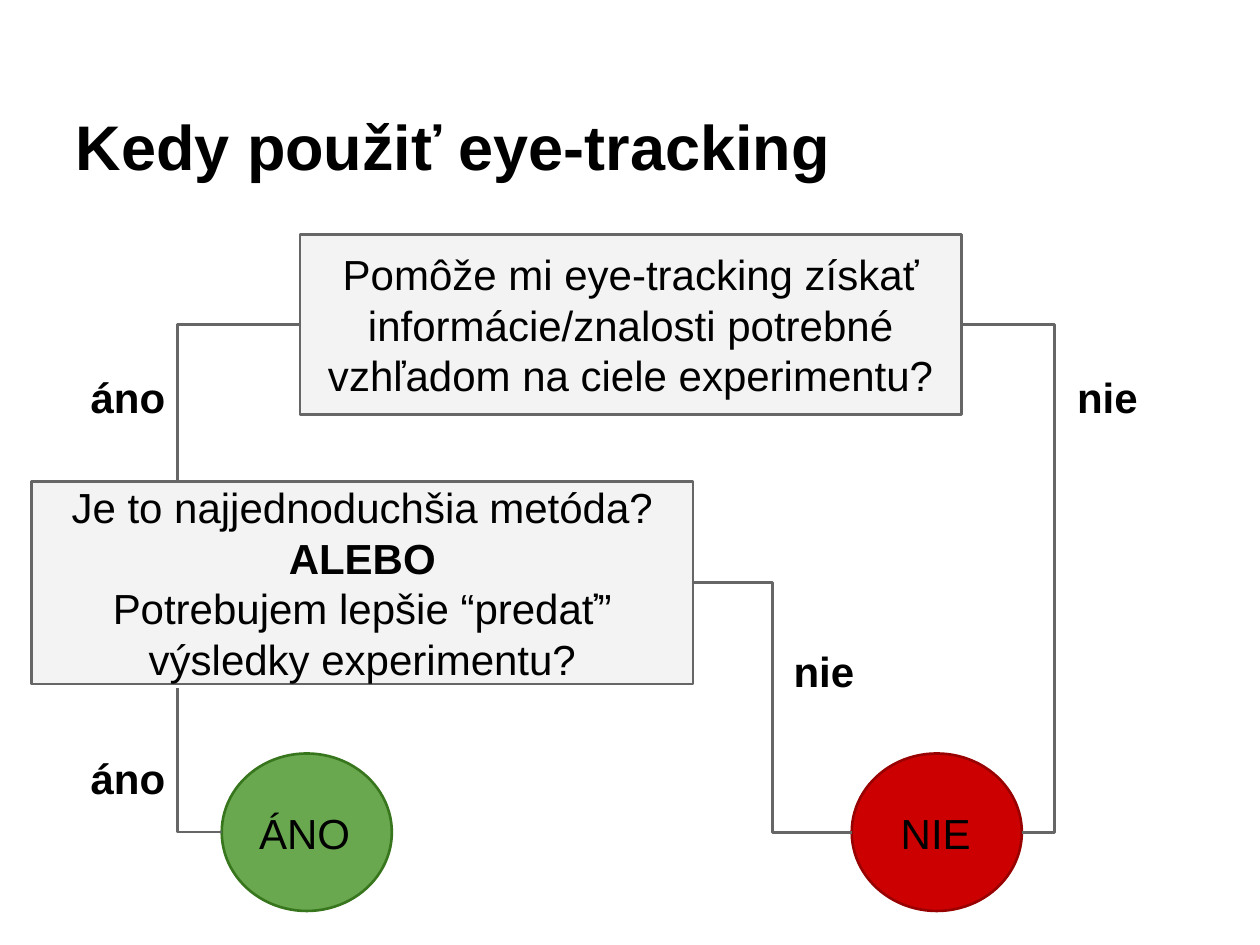
from lxml import etree
from pptx import Presentation
from pptx.dml.color import RGBColor
from pptx.enum import shapes, text
from pptx.oxml.ns import qn
from pptx.util import Inches, Pt

# Content: places are left, top, width, height in inches
TITLE = "Kedy použiť eye-tracking"
FONT, LINE = "Arial", "666666"
RECT, OVAL = shapes.MSO_SHAPE.RECTANGLE, shapes.MSO_SHAPE.OVAL
LEFT, CENTER, RIGHT = text.PP_ALIGN.LEFT, text.PP_ALIGN.CENTER, text.PP_ALIGN.RIGHT

NODES = {
    "helps": (RECT, (2.38, 1.86, 5.25, 1.43), "F3F3F3", LINE, CENTER,
              ["Pomôže mi eye-tracking získať informácie/znalosti potrebné "
               "vzhľadom na ciele experimentu?"]),
    "simplest": (RECT, (0.25, 3.82, 5.25, 1.61), "F3F3F3", LINE, CENTER,
                 ["Je to najjednoduchšia metóda?", "ALEBO",
                  "Potrebujem lepšie “predať” výsledky experimentu?"]),
    "yes": (OVAL, (1.76, 5.98, 1.35, 1.25), "6AA84F", "38761D", LEFT, ["ÁNO"]),
    "no": (OVAL, (6.76, 5.98, 1.35, 1.25), "CC0000", "990000", LEFT, [" NIE"]),
}
BOLD_LINES = {"ALEBO"}
LABELS = [("áno", 0.44, 2.85, RIGHT), ("áno", 0.44, 5.87, RIGHT),
          ("nie", 8.45, 2.85, LEFT), ("nie", 6.2, 5.02, LEFT)]

# Start node and side, end node and side (or a free point), x of the vertical part
YES_X = 1.41
LINKS = [("helps", "left", (YES_X, 3.83), YES_X),
         ("yes", "left", (YES_X, 5.46), YES_X),
         ("helps", "right", ("no", "right"), 8.37),
         ("simplest", "right", ("no", "left"), 6.13)]
SITES = {(RECT, "left"): 1, (RECT, "right"): 3, (OVAL, "left"): 2, (OVAL, "right"): 6}


def color(value):
    return RGBColor.from_string(value)


def write(frame, lines, size, align, anchor, bold=False):
    frame.word_wrap = True
    frame.vertical_anchor = anchor
    frame.margin_left = frame.margin_right = Inches(0.1)
    frame.margin_top = frame.margin_bottom = Inches(0.1)
    frame.text = "\n".join(lines)
    for para in frame.paragraphs:
        para.alignment = align
        for span in para.runs:
            span.font.name, span.font.size = FONT, Pt(size)
            span.font.bold = bold or span.text in BOLD_LINES
            span.font.color.rgb = color("000000")


def side_point(name, side):
    left, top, width, height = NODES[name][1]
    return left + (width if side == "right" else 0), top + height / 2


def glue(link, tag, name, side):
    etree.SubElement(link._element.nvCxnSpPr.cNvCxnSpPr, qn(tag),
                     id=str(boxes[name].shape_id), idx=str(SITES[NODES[name][0], side]))


deck = Presentation()
deck.slide_width, deck.slide_height = Inches(10), Inches(7.5)
page = deck.slides.add_slide(deck.slide_layouts[5])

# Title
title = page.shapes.title
title.left, title.top, title.width, title.height = map(Inches, (0.5, 0.3, 9, 1.25))
write(title.text_frame, [TITLE], 36, LEFT, text.MSO_ANCHOR.BOTTOM, bold=True)

# Questions and outcomes
boxes = {}
for name, (kind, place, fill, edge, align, lines) in NODES.items():
    box = boxes[name] = page.shapes.add_shape(kind, *map(Inches, place))
    box.shadow.inherit = False
    box.fill.solid()
    box.fill.fore_color.rgb = color(fill)
    box.line.color.rgb = color(edge)
    box.line.width = Pt(1.5)
    write(box.text_frame, lines, 24, align, text.MSO_ANCHOR.MIDDLE)

# Elbow links: one bend to a free point, two bends between nodes
for name, side, end, bend_x in LINKS:
    joined = isinstance(end[0], str)
    x1, y1 = side_point(name, side)
    x2, y2 = side_point(*end) if joined else end
    link = page.shapes.add_connector(shapes.MSO_CONNECTOR.ELBOW,
                                     *map(Inches, (x1, y1, x2, y2)))
    link.line.color.rgb = color(LINE)
    link.line.width = Pt(1.5)
    etree.SubElement(link._element.spPr, qn("a:effectLst"))
    glue(link, "a:stCxn", name, side)
    geometry = link._element.spPr.find(qn("a:prstGeom"))
    if joined:
        glue(link, "a:endCxn", *end)
        ratio = round((bend_x - x1) / (x2 - x1) * 100000)
        etree.SubElement(geometry.find(qn("a:avLst")), qn("a:gd"),
                         name="adj1", fmla=f"val {ratio}")
    else:
        geometry.set("prst", "bentConnector2")

# Answer labels
for answer, left, top, align in LABELS:
    label = page.shapes.add_textbox(*map(Inches, (left, top, 0.97, 0.44)))
    write(label.text_frame, [answer], 24, align, text.MSO_ANCHOR.TOP, bold=True)

deck.save("out.pptx")
